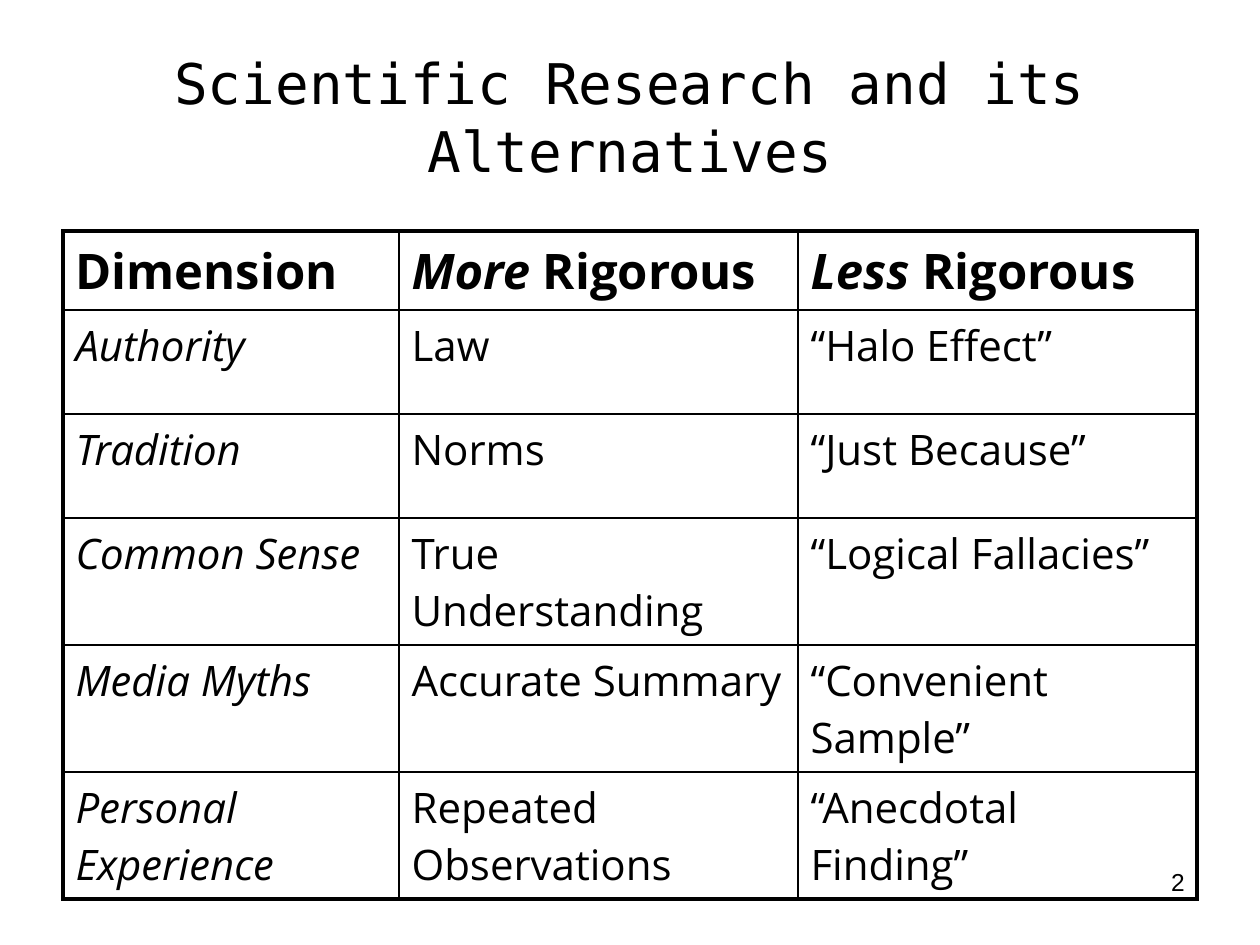
from dataclasses import dataclass

from lxml import etree
from pptx import Presentation
from pptx.dml.color import RGBColor
from pptx.enum.text import MSO_ANCHOR, PP_ALIGN
from pptx.oxml.ns import qn
from pptx.util import Emu, Pt

TOP, MIDDLE, BOTTOM = MSO_ANCHOR.TOP, MSO_ANCHOR.MIDDLE, MSO_ANCHOR.BOTTOM
CENTER, RIGHT = PP_ALIGN.CENTER, PP_ALIGN.RIGHT
PIXELS_PER_INCH = 126
BLACK = "000000"
TABLE_FONT = "Open Sans"
THICK, THIN = 2.25, 1
COLUMN_WIDTHS = [336, 399, 399]
ROW_HEIGHTS = [79, 104, 104, 127, 127, 127]


@dataclass(frozen=True)
class Span:
    text: str
    size: int
    font: str = TABLE_FONT
    bold: bool = False
    italic: bool = False


@dataclass(frozen=True)
class Label:
    left: int
    top: int
    width: int
    height: int
    span: Span
    alignment: PP_ALIGN
    anchor: MSO_ANCHOR


LABELS = [
    Label(903, 861, 294, 66, Span("2", 14, "Arial"), RIGHT, TOP),
    Label(63, 37, 1134, 158,
          Span("Scientific Research and its Alternatives", 32, "DejaVu Sans Mono"),
          CENTER, MIDDLE),
]
HEADER = [
    [Span("Dimension", 28, bold=True)],
    [Span("More", 28, bold=True, italic=True), Span(" Rigorous", 28, bold=True)],
    [Span("Less ", 28, bold=True, italic=True), Span("Rigorous", 28, bold=True)],
]
DIMENSIONS = [
    ("Authority", "Law", "“Halo Effect”"),
    ("Tradition", "Norms", "“Just Because”"),
    ("Common Sense", "True Understanding", "“Logical Fallacies”"),
    ("Media Myths", "Accurate Summary", "“Convenient Sample”"),
    ("Personal Experience", "Repeated Observations", "“Anecdotal Finding”"),
]


def px(length: int) -> Emu:
    """Turn pixels into EMU."""
    return Emu(round(length * 914400 / PIXELS_PER_INCH))


def color(value: str) -> RGBColor:
    """Turn a hex string into a colour."""
    return RGBColor.from_string(value)


def add_span(paragraph, span: Span) -> None:
    """Append one formatted run to a paragraph."""
    run = paragraph.add_run()
    run.text = span.text
    font = run.font
    font.name, font.size = span.font, Pt(span.size)
    font.bold, font.italic = span.bold, span.italic
    font.color.rgb = color(BLACK)


def add_label(slide, label: Label) -> None:
    """Draw a wrapped text box."""
    shape = slide.shapes.add_textbox(
        px(label.left), px(label.top), px(label.width), px(label.height))
    frame = shape.text_frame
    frame.word_wrap = True
    frame.vertical_anchor = label.anchor
    paragraph = frame.paragraphs[0]
    paragraph.alignment = label.alignment
    add_span(paragraph, label.span)


def add_border(cell, side: str, width: float) -> None:
    """Add a solid border to one side of a cell."""
    properties = cell._tc.get_or_add_tcPr()
    line = etree.SubElement(properties, qn(f"a:ln{side}"), w=str(Pt(width)))
    fill = etree.SubElement(line, qn("a:solidFill"))
    etree.SubElement(fill, qn("a:srgbClr"), val=BLACK)


def set_space_before(paragraph, percent: int) -> None:
    """Set the space before a paragraph as a share of its line."""
    properties = paragraph._p.get_or_add_pPr()
    space = etree.SubElement(properties, qn("a:spcBef"))
    etree.SubElement(space, qn("a:spcPct"), val=str(percent * 1000))


def fill_cell(cell, spans: list[Span], row: int, column: int) -> None:
    """Write a cell and draw its borders, thick on the table's outside."""
    cell.vertical_anchor = BOTTOM if row == 0 else TOP
    outside = {
        "L": column == 0,
        "R": column == len(COLUMN_WIDTHS) - 1,
        "T": row == 0,
        "B": row == len(ROW_HEIGHTS) - 1,
    }
    for side, is_outside in outside.items():
        add_border(cell, side, THICK if is_outside else THIN)
    cell.fill.background()
    paragraph = cell.text_frame.paragraphs[0]
    set_space_before(paragraph, 20)
    for span in spans:
        add_span(paragraph, span)


def add_comparison(slide) -> None:
    """Draw the table of dimensions."""
    body = [[[Span(text, 24, italic=column == 0)] for column, text in enumerate(texts)]
            for texts in DIMENSIONS]
    table = slide.shapes.add_table(
        len(ROW_HEIGHTS), len(COLUMN_WIDTHS), px(63), px(231),
        px(sum(COLUMN_WIDTHS)), px(sum(ROW_HEIGHTS))).table
    table.first_row = table.horz_banding = False
    for column, width in zip(table.columns, COLUMN_WIDTHS):
        column.width = px(width)
    for row, height in zip(table.rows, ROW_HEIGHTS):
        row.height = px(height)
    for row, cells in enumerate([HEADER, *body]):
        for column, spans in enumerate(cells):
            fill_cell(table.cell(row, column), spans, row, column)


def main() -> None:
    """Build the slide and save it."""
    presentation = Presentation()
    presentation.slide_width, presentation.slide_height = px(1260), px(945)
    slide = presentation.slides.add_slide(presentation.slide_layouts[6])
    for label in LABELS:
        add_label(slide, label)
    add_comparison(slide)
    presentation.save("out.pptx")


if __name__ == "__main__":
    main()
